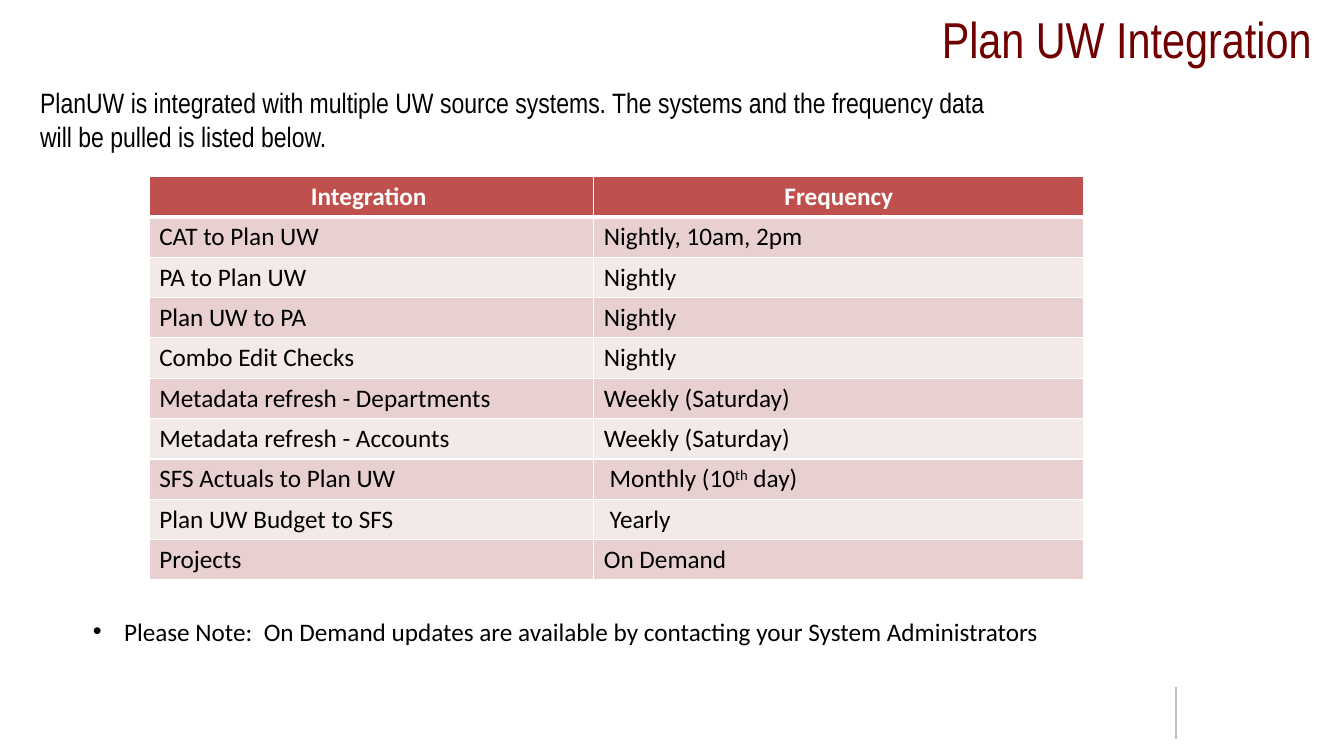
from lxml import etree
from pptx import Presentation
from pptx import util as u
from pptx.dml.color import RGBColor
from pptx.enum import shapes, text
from pptx.oxml import ns

MAROON = RGBColor(0x70, 0x00, 0x00)
BLACK = RGBColor(0x00, 0x00, 0x00)
WHITE = RGBColor(0xFF, 0xFF, 0xFF)
GREY = RGBColor(0xBF, 0xBF, 0xBF)
HEADER_RED = RGBColor(0xC0, 0x50, 0x4D)
ROSE = RGBColor(0xE8, 0xD0, 0xD0)
PALE_ROSE = RGBColor(0xF4, 0xE9, 0xE9)

SCHEDULE = [
    ("Integration ", ["Frequency"]),
    ("CAT to Plan UW", ["Nightly, 10am, 2pm"]),
    ("PA to Plan UW", ["Nightly"]),
    ("Plan UW to PA", ["Nightly"]),
    ("Combo Edit Checks", ["Nightly"]),
    ("Metadata refresh - Departments", ["Weekly (Saturday)"]),
    ("Metadata refresh - Accounts", ["Weekly (Saturday)"]),
    ("SFS Actuals to Plan UW", [" Monthly (10", "th", " day)"]),
    ("Plan UW Budget to SFS", [" Yearly"]),
    ("Projects", ["On Demand"]),
]


class IntegrationSlide:
    """Builds the integration schedule slide in one consistent style."""

    heading_font = "Arial Narrow"
    table_font = "Calibri"

    def __init__(self, deck):
        self.page = deck.slides.add_slide(deck.slide_layouts[1])

    def place(self, box, left, top, width, height):
        box.left, box.top = u.Inches(left), u.Inches(top)
        box.width, box.height = u.Inches(width), u.Inches(height)

    def add_words(self, frame, parts, font, size, color, bold=False,
                  align=text.PP_ALIGN.LEFT):
        para = frame.paragraphs[0]
        para.alignment = align
        para.space_before = u.Pt(0)
        for part in parts:
            span = para.add_run()
            span.text = part
            span.font.name = font
            span.font.size = u.Pt(size)
            span.font.bold = bold
            span.font.color.rgb = color
            if part == "th":
                span._r.get_or_add_rPr().set("baseline", "30000")
        return para

    def title(self, words, *area):
        box = self.page.shapes.title
        self.place(box, *area)
        box.text_frame.auto_size = text.MSO_AUTO_SIZE.NONE
        box.text_frame.vertical_anchor = text.MSO_ANCHOR.MIDDLE
        self.add_words(box.text_frame, [words], self.heading_font, 36, MAROON,
                       align=text.PP_ALIGN.RIGHT)

    def intro(self, words, *area):
        box = self.page.shapes.add_textbox(*map(u.Inches, area))
        box.text_frame.word_wrap = True
        self.add_words(box.text_frame, [words], self.heading_font, 20, BLACK)

    def note(self, words, *area):
        box = self.page.placeholders[1]
        self.place(box, *area)
        box.text_frame.auto_size = text.MSO_AUTO_SIZE.NONE
        para = self.add_words(box.text_frame, [words], self.table_font, 18, BLACK)
        settings = para._p.get_or_add_pPr()
        settings.set("marL", str(u.Inches(0.31)))
        settings.set("indent", str(u.Inches(-0.31)))

    def border(self, cell, side, points):
        settings = cell._tc.get_or_add_tcPr()
        edge = etree.SubElement(settings, ns.qn(f"a:ln{side}"), w=str(u.Pt(points)))
        fill = etree.SubElement(edge, ns.qn("a:solidFill"))
        etree.SubElement(fill, ns.qn("a:srgbClr"), val=str(WHITE))

    def table(self, rows, widths, left, top, row_height):
        frame = self.page.shapes.add_table(
            len(rows), len(widths), u.Inches(left), u.Inches(top),
            u.Inches(sum(widths)), u.Inches(row_height * len(rows)))
        grid = frame.table
        for column, width in zip(grid.columns, widths):
            column.width = u.Inches(width)
        for index, (name, frequency) in enumerate(rows):
            grid.rows[index].height = u.Inches(row_height)
            header = index == 0
            band = HEADER_RED if header else ROSE if index % 2 else PALE_ROSE
            for cell, parts in zip(grid.rows[index].cells, ([name], frequency)):
                for side in "LRTB":
                    heavy = (header and side == "B") or (index == 1 and side == "T")
                    self.border(cell, side, 3 if heavy else 1)
                cell.fill.solid()
                cell.fill.fore_color.rgb = band
                self.add_words(cell.text_frame, parts, self.table_font, 18,
                               WHITE if header else BLACK, header,
                               text.PP_ALIGN.CENTER if header else text.PP_ALIGN.LEFT)

    def rule(self, *ends):
        line = self.page.shapes.add_connector(
            shapes.MSO_CONNECTOR.STRAIGHT, *map(u.Inches, ends))
        line.line.color.rgb = GREY
        line.line.width = u.Pt(1.5)
        etree.SubElement(line._element.spPr, ns.qn("a:effectLst"))


def main():
    deck = Presentation()
    deck.slide_width, deck.slide_height = u.Inches(13.33), u.Inches(7.5)
    slide = IntegrationSlide(deck)
    slide.rule(11.66, 6.82, 11.66, 7.33)
    slide.title("Plan UW Integration", 3.11, 0.08, 10, 0.6)
    slide.intro("PlanUW is integrated with multiple UW source systems. The systems "
                "and the frequency data will be pulled is listed below.",
                0.3, 0.8, 9.84, 0.77)
    slide.table(SCHEDULE, [4.41, 4.86], 1.48, 1.75, 0.4)
    slide.note("Please Note:  On Demand updates are available by contacting your "
               "System Administrators", 0.82, 6.06, 9.84, 0.4)
    deck.save("out.pptx")


if __name__ == "__main__":
    main()
